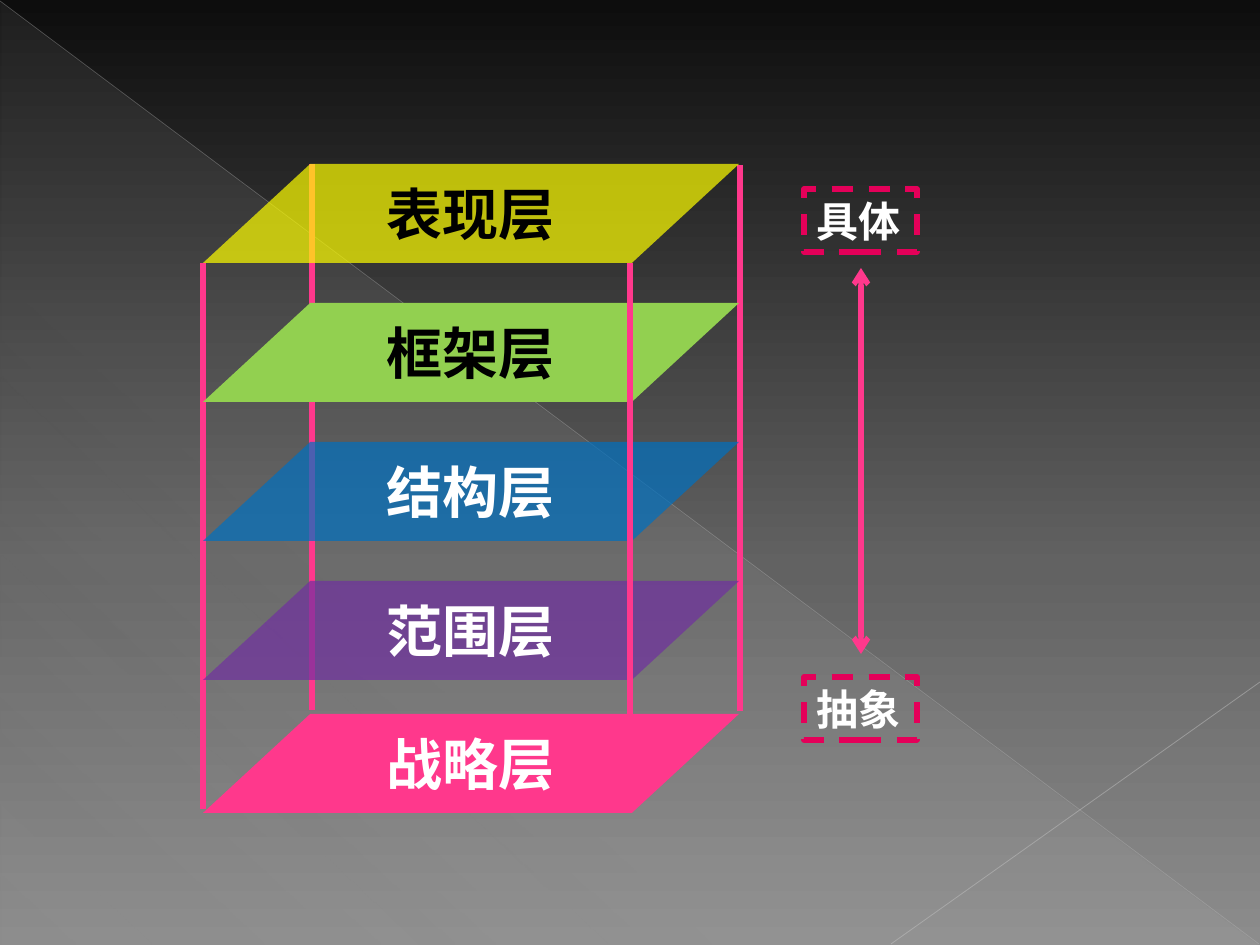
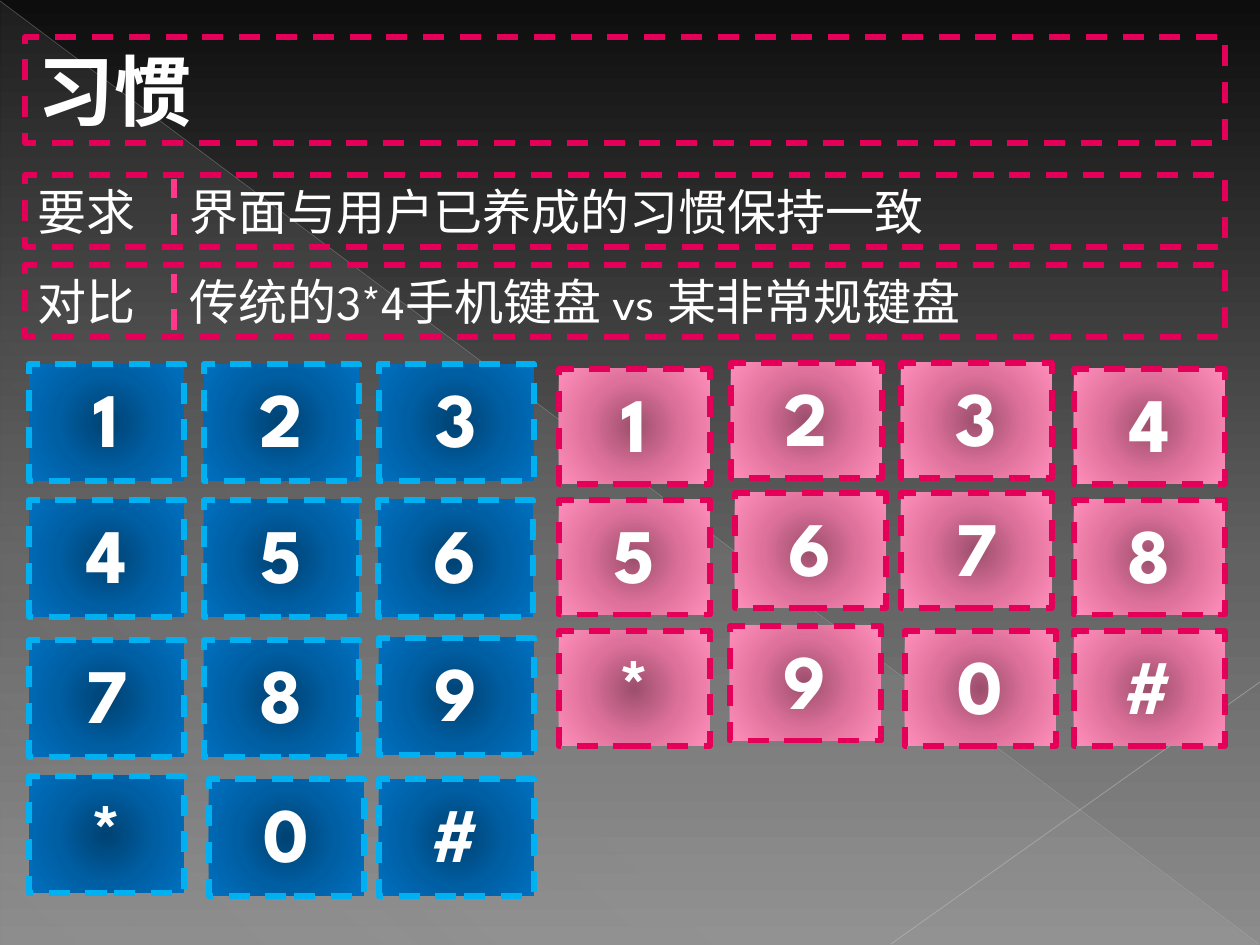
"""Build two slides: the five design layers, and a keypad comparison."""
from copy import deepcopy
from dataclasses import dataclass

from lxml import etree
from pptx import Presentation
from pptx import util as u
from pptx.dml.color import RGBColor
from pptx.enum import dml, shapes, text
from pptx.oxml import parse_xml
from pptx.oxml.ns import nsdecls, qn


@dataclass(frozen=True)
class Theme:
    font: str = "League Spartan"
    white: str = "FFFFFF"
    black: str = "000000"
    pink: str = "FF388C"
    red: str = "E40059"
    sky: str = "00B0F0"
    gold: str = "FFFF00"
    green: str = "92D050"
    blue: str = "0070C0"
    plum: str = "7030A0"
    ray: str = "BFBFBF"
    beam: str = "C6C6C6"
    big: int = 44
    mid: int = 32
    body: int = 28
    tag: int = 24
    rule: float = 3


look = Theme()
PX = 914400 / 126
ROUND = '<a:path path="circle"><a:fillToRect l="50000" t="50000" r="50000" b="50000"/></a:path>'
SLANT = '<a:lin ang="{}" scaled="0"/>'
blends = {
    "back": ([(0, "0D0D0D", 100), (60, "626262", 100), (100, "8C8C8C", 100)], SLANT.format(90 * 60000)),
    "veil": ([(0, "D2D2D2", 10), (70, "D2D2D2", 8), (100, "D2D2D2", 1)], SLANT.format(133 * 60000)),
    "cool": ([(0, "004272", 100), (50, "005EA2", 100), (100, "0070C0", 100)], ROUND),
    "warm": ([(0, "9C4F6D", 100), (50, "DE719B", 100), (100, "FF8EBA", 100)], ROUND),
}
grads = {}
for name, (stops, way) in blends.items():
    marks = "".join(
        f'<a:gs pos="{pos * 1000}"><a:srgbClr val="{hue}"><a:alpha val="{alpha * 1000}"/></a:srgbClr></a:gs>'
        for pos, hue, alpha in stops)
    grads[name] = parse_xml(f'<a:gradFill {nsdecls("a")}><a:gsLst>{marks}</a:gsLst>{way}</a:gradFill>')


def write(page, words, box, *, kind=shapes.MSO_SHAPE.RECTANGLE, hold=None, size=look.big,
          bold=True, color=look.white, align=text.PP_ALIGN.LEFT, anchor=text.MSO_ANCHOR.TOP,
          fill=None, alpha=100, edge=None, tab=None):
    """Put text in a new shape, or in the one held, and format both."""
    spot = [round(v * PX) for v in box]
    item = hold or page.shapes.add_shape(kind, *spot)
    item.left, item.top, item.width, item.height = spot
    item.shadow.inherit = False
    props = item.element.spPr
    if fill is None:
        item.fill.background()
    else:
        item.fill.solid()
        if fill in grads:
            props.replace(props.find(qn("a:solidFill")), deepcopy(grads[fill]))
        else:
            item.fill.fore_color.rgb = RGBColor.from_string(fill)
            if alpha < 100:
                shade = next(props.iter(qn("a:srgbClr")))
                etree.SubElement(shade, qn("a:alpha"), val=str(alpha * 1000))
    if edge is None:
        item.line.fill.background()
    else:
        item.line.color.rgb = RGBColor.from_string(edge)
        item.line.width = u.Pt(look.rule)
        item.line.dash_style = dml.MSO_LINE.DASH
    if words:
        frame = item.text_frame
        frame.word_wrap = True
        frame.auto_size = text.MSO_AUTO_SIZE.NONE
        frame.vertical_anchor = anchor
        para = frame.paragraphs[0]
        para.alignment = align
        if tab:
            tabs = etree.SubElement(para._p.get_or_add_pPr(), qn("a:tabLst"))
            etree.SubElement(tabs, qn("a:tab"), pos=str(round(tab * PX)), algn="l")
        run = para.add_run()
        run.text = words
        run.font.name, run.font.size, run.font.bold = look.font, u.Pt(size), bold
        run.font.color.rgb = RGBColor.from_string(color)
    return item


def rule(page, start, end, *, color=look.pink, width=look.rule, alpha=100, dash=False, heads=False):
    """Draw a straight line."""
    ends = [round(v * PX) for v in (*start, *end)]
    item = page.shapes.add_connector(shapes.MSO_CONNECTOR.STRAIGHT, *ends)
    item.line.color.rgb = RGBColor.from_string(color)
    item.line.width = u.Pt(width)
    if dash:
        item.line.dash_style = dml.MSO_LINE.DASH
    props = item.element.spPr
    if alpha < 100:
        shade = next(props.iter(qn("a:srgbClr")))
        etree.SubElement(shade, qn("a:alpha"), val=str(alpha * 1000))
    if heads:
        for side in ("a:headEnd", "a:tailEnd"):
            etree.SubElement(props.find(qn("a:ln")), qn(side), type="arrow")
    etree.SubElement(props, qn("a:effectLst"))
    return item


deck = Presentation()
deck.slide_width, deck.slide_height = round(1260 * PX), round(945 * PX)
stack = deck.slides.add_slide(deck.slide_layouts[6])

master = deck.slide_master
master.background.fill.solid()
sheet = master.element.cSld.bg.bgPr
sheet.replace(sheet.find(qn("a:solidFill")), deepcopy(grads["back"]))
decor = [
    write(stack, "", (1, 2, 1258, 943), kind=shapes.MSO_SHAPE.RIGHT_TRIANGLE, fill="veil"),
    rule(stack, (0, 1), (1259, 944), color=look.ray, width=0.39, alpha=35),
    rule(stack, (1260, 682), (891, 944), color=look.beam, width=0.47, alpha=45),
]
for i, item in enumerate(decor):
    next(item.element.iter(qn("p:cNvPr"))).set("id", str(50 + i))
    master.element.cSld.spTree.insert(2 + i, item.element)

rule(stack, (861, 268), (861, 654), heads=True)
for word, top in (("具体", 189), ("抽象", 677)):
    write(stack, word, (804, top, 113, 63), size=look.tag, edge=look.red)

TOP, STEP = 164, 139
layers = [
    ("战略层", 714, look.pink, 100, look.white),
    ("表现层", TOP, look.gold, 70, look.black),
    ("框架层", TOP + STEP, look.green, 100, look.black),
    ("结构层", TOP + 2 * STEP, look.blue, 70, look.white),
    ("范围层", TOP + 3 * STEP, look.plum, 70, look.white),
]
poles = [(203, 263), (740, 165), (312, 164)]
for i, (word, top, fill, alpha, color) in enumerate(layers):
    write(stack, word, (203, top, 536, 99), kind=shapes.MSO_SHAPE.FLOWCHART_DATA, size=look.mid,
          color=color, fill=fill, alpha=alpha, align=text.PP_ALIGN.CENTER,
          anchor=text.MSO_ANCHOR.MIDDLE)
    if i == 0:
        for x, y in poles:
            rule(stack, (x, y), (x, y + 546))
rule(stack, (630, 263), (630, 809))

habit = deck.slides.add_slide(deck.slide_layouts[5])
write(habit, "习惯", (25, 37, 1200, 106), hold=habit.shapes.title, edge=look.red)

pads = [
    ("cool", look.sky, (155, 117), (29, 204, 379), (364, 500, 640, 779), "123456789*0#",
     {"6": (-1, 0), "9": (0, -2), "*": (0, -3), "0": (5, 0)}),
    ("warm", look.red, (151, 115), (559, 731, 901, 1074), (369, 500, 631), "12345678*90#",
     {"2": (0, -6), "3": (0, -6), "6": (4, -7), "7": (0, -7), "9": (-1, -5), "0": (4, 0)}),
]
for fill, edge, size, cols, rows, keys, shifts in pads:
    for i, key in enumerate(keys):
        row, col = divmod(i, len(cols))
        dx, dy = shifts.get(key, (0, 0))
        write(habit, key, (cols[col] + dx, rows[row] + dy, *size), fill=fill, edge=edge,
              align=text.PP_ALIGN.CENTER)

notes = [
    ("要求\t界面与用户已养成的习惯保持一致", 175, 179),
    ("对比\t传统的3*4手机键盘 vs 某非常规键盘", 265, 274),
]
for words, top, bar in notes:
    write(habit, words, (25, top, 1200, 72), size=look.body, bold=False, edge=look.red, tab=152)
    rule(habit, (174, bar + 56), (174, bar), dash=True)

deck.save("out.pptx")
